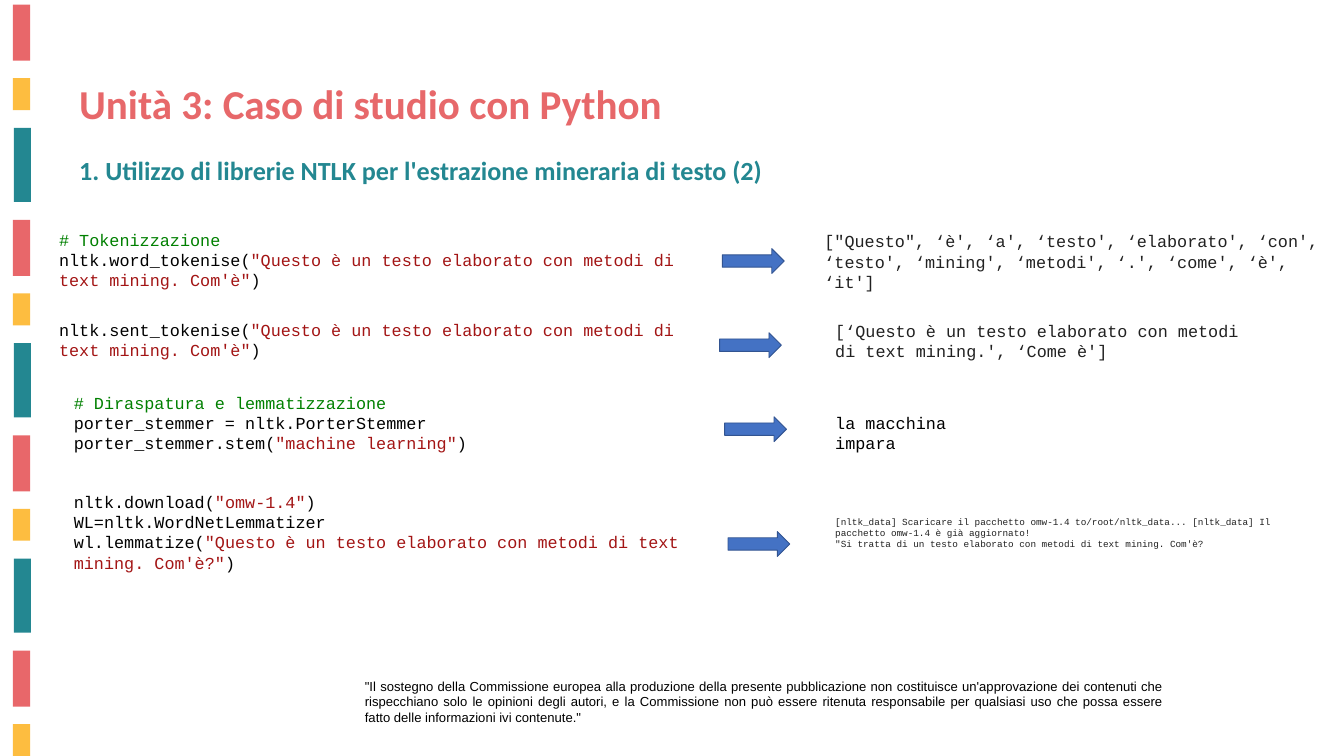
from pptx import Presentation, util as u
from pptx.dml import color
from pptx.enum import shapes, text

Pt = u.Pt


def tint(code):
    return color.RGBColor.from_string(code)


def write(box, paras, style, align=text.PP_ALIGN.LEFT):
    """Fill a shape with paragraphs, each a list of (words, colour) runs."""
    frame = box.text_frame
    frame.word_wrap = True
    for i, parts in enumerate(paras):
        para = frame.paragraphs[0] if i == 0 else frame.add_paragraph()
        para.alignment = align
        for words, hue in parts:
            run = para.add_run()
            run.text = words
            for key, value in style.items():
                setattr(run.font, key, value)
            run.font.color.rgb = tint(hue)


CORAL, GOLD, TEAL = "E8676A", "FDBD40", "238791"
BLACK, GREY, GREEN, RED = "000000", "212121", "008000", "A31515"
code = {"name": "Courier New", "size": Pt(18)}
small = {"name": "Courier New", "size": Pt(10)}
title = {"name": "Calibri", "size": Pt(44), "bold": True}
topic = {"name": "Calibri", "size": Pt(28), "bold": True}
legal = {"name": "Arial", "size": Pt(14)}

deck = Presentation()
deck.slide_width, deck.slide_height = Pt(1440), Pt(810)
slide = deck.slides.add_slide(deck.slide_layouts[6])
items = slide.shapes

# Striped left edge: three bars, repeated down the page
bars = [(13.7, 5, 18.7, 60, CORAL),
        (13.7, 83.7, 18.7, 34.2, GOLD),
        (15, 137, 18, 79.4, TEAL)]
step = 230.7
for n in range(11):
    turn, kind = divmod(n, 3)
    x, y, w, h, hue = bars[kind]
    bar = items.add_shape(shapes.MSO_SHAPE.RECTANGLE,
                          Pt(x), Pt(y + turn * step), Pt(w), Pt(h))
    bar.shadow.inherit = False
    bar.fill.solid()
    bar.fill.fore_color.rgb = tint(hue)
    bar.line.fill.background()

# Headings, code on the left and results on the right
quote = "\"Questo è un testo elaborato con metodi di text mining. Com'è"
texts = [
    (77.8, 80.6, 726, 60.5, title,
     [[("Unità 3: Caso di studio con Python", "E7686A")]]),
    (77.8, 162, 1122, 41, topic,
     [[("1. Utilizzo di librerie NTLK per l'estrazione mineraria di testo (2)", TEAL)]]),
    (56.2, 242.6, 720, 72.7, code,
     [[("# Tokenizzazione", GREEN)],
      [("nltk.word_tokenise(", BLACK), (quote + '"', RED), (")", BLACK)]]),
    (876.2, 244, 546, 72.7, code,
     [[("[\"Questo\", ‘è', ‘a', ‘testo', ‘elaborato', ‘con', ‘testo', "
        "‘mining', ‘metodi', ‘.', ‘come', ‘è', ‘it']", GREY)]]),
    (56.2, 339, 720, 51, code,
     [[("nltk.sent_tokenise(", BLACK), (quote + '"', RED), (")", BLACK)]]),
    (887.8, 340, 448, 51, code,
     [[("[‘Questo è un testo elaborato con metodi di text mining.', ‘Come è']", GREY)]]),
    (72, 417, 720, 72.7, code,
     [[("# Diraspatura e lemmatizzazione", GREEN)],
      [("porter_stemmer = nltk.PorterStemmer", BLACK)],
      [("porter_stemmer.stem(", BLACK), ('"machine learning"', RED), (")", BLACK)]]),
    (887.8, 438.5, 155.5, 51, code, [[("la macchina impara", BLACK)]]),
    (72, 523.4, 720, 94.3, code,
     [[("nltk.download(", BLACK), ('"omw-1.4"', RED), (")", BLACK)],
      [("WL=nltk.WordNetLemmatizer", BLACK)],
      [("wl.lemmatize(", BLACK), (quote + '?"', RED), (")", BLACK)]]),
]
for x, y, w, h, style, paras in texts:
    write(items.add_textbox(Pt(x), Pt(y), Pt(w), Pt(h)), paras, style)

# Result of the lemmatizer, on a white panel
panel = items.add_shape(shapes.MSO_SHAPE.RECTANGLE,
                        Pt(887.8), Pt(553), Pt(522), Pt(36))
panel.shadow.inherit = False
panel.fill.solid()
panel.fill.fore_color.rgb = tint("FFFFFF")
panel.line.fill.background()
panel.text_frame.margin_top = panel.text_frame.margin_bottom = 0
panel.text_frame.vertical_anchor = text.MSO_ANCHOR.MIDDLE
write(panel,
      [[("[nltk_data] Scaricare il pacchetto omw-1.4 to/root/nltk_data... "
         "[nltk_data] Il pacchetto omw-1.4 è già aggiornato!", GREY)],
       [("\"Si tratta di un testo elaborato con metodi di text mining. Com'è?", GREY)]],
      small)

# Arrows from code to result
for x, y in [(774, 266.4), (771, 356.6), (776.4, 446.6), (780, 569.6)]:
    arrow = items.add_shape(shapes.MSO_SHAPE.RIGHT_ARROW,
                            Pt(x), Pt(y), Pt(66.2), Pt(26.6))
    arrow.shadow.inherit = False
    arrow.fill.solid()
    arrow.fill.fore_color.rgb = tint("4472C4")
    arrow.line.color.rgb = tint("325491")
    arrow.line.width = Pt(1)

# Disclaimer
note = items.add_textbox(Pt(383.8), Pt(723), Pt(869.8), Pt(58.3))
write(note,
      [[("\"Il sostegno della Commissione europea alla produzione della presente "
         "pubblicazione non costituisce un'approvazione dei contenuti che "
         "rispecchiano solo le opinioni degli autori, e la Commissione non può "
         "essere ritenuta responsabile per qualsiasi uso che possa essere fatto "
         "delle informazioni ivi contenute.\"", BLACK)]],
      legal, text.PP_ALIGN.JUSTIFY)

deck.save("out.pptx")
